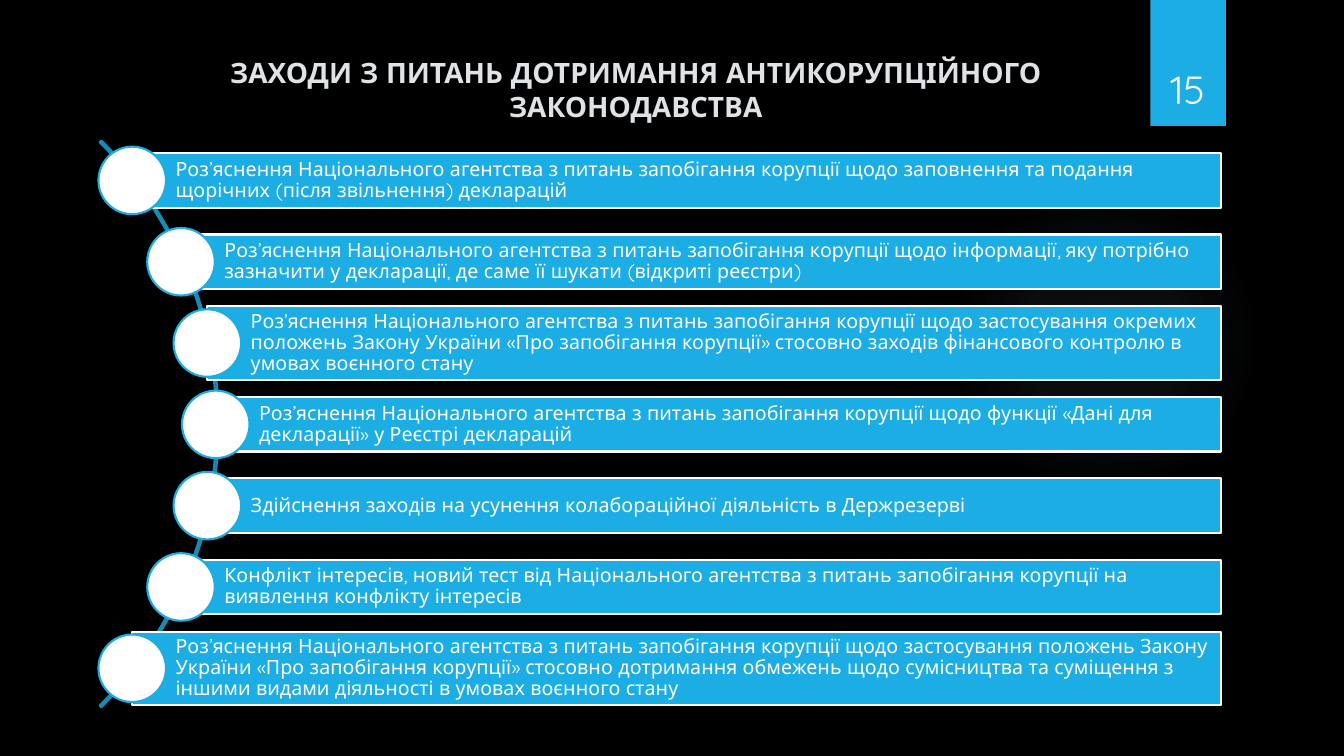
import math

import pptx
import pptx.dml.color
import pptx.enum.shapes
import pptx.enum.text
import pptx.oxml
import pptx.util

Inches = pptx.util.Inches
Pt = pptx.util.Pt
RGBColor = pptx.dml.color.RGBColor
SHAPE = pptx.enum.shapes.MSO_SHAPE
ANCHOR = pptx.enum.text.MSO_ANCHOR
ALIGN = pptx.enum.text.PP_ALIGN

BLACK = RGBColor(0x00, 0x00, 0x00)
WHITE = RGBColor(0xFF, 0xFF, 0xFF)
BLUE = RGBColor(0x1C, 0xAD, 0xE4)
ARC_BLUE = RGBColor(0x16, 0x8B, 0xB7)
TITLE_GRAY = RGBColor(0xDF, 0xE3, 0xE5)
FONT = "Quicksand"

# Each measure with the height of its bar
MEASURES = [
    ("Роз’яснення Національного агентства з питань запобігання корупції щодо "
     "заповнення та подання щорічних (після звільнення) декларацій", 0.54),
    ("Роз’яснення Національного агентства з питань запобігання корупції щодо "
     "інформації, яку потрібно зазначити у декларації, де саме її шукати "
     "(відкриті реєстри)", 0.54),
    ("Роз’яснення Національного агентства з питань запобігання корупції щодо "
     "застосування окремих положень Закону України «Про запобігання корупції» "
     "стосовно заходів фінансового контролю в умовах воєнного стану", 0.74),
    ("Роз’яснення Національного агентства з питань запобігання корупції щодо "
     "функції «Дані для декларації» у Реєстрі декларацій", 0.54),
    ("Здійснення заходів на усунення колабораційної діяльність в Держрезерві", 0.54),
    ("Конфлікт інтересів, новий тест від Національного агентства з питань "
     "запобігання корупції на виявлення конфлікту інтересів", 0.54),
    ("Роз’яснення Національного агентства з питань запобігання корупції щодо "
     "застосування положень Закону України «Про запобігання корупції» стосовно "
     "дотримання обмежень щодо сумісництва та суміщення з іншими видами "
     "діяльності в умовах воєнного стану", 0.72),
]

deck = pptx.Presentation()
deck.slide_width = Inches(13.33)
deck.slide_height = Inches(7.5)
slide = deck.slides.add_slide(deck.slide_layouts[5])
slide.background.fill.solid()
slide.background.fill.fore_color.rgb = BLACK


def add_shape(kind, left, top, width, height, fill=None, line=None):
    shape = slide.shapes.add_shape(
        kind, Inches(left), Inches(top), Inches(width), Inches(height))
    shape.shadow.inherit = False
    if fill is None:
        shape.fill.background()
    else:
        shape.fill.solid()
        shape.fill.fore_color.rgb = fill
    if line is None:
        shape.line.fill.background()
    else:
        shape.line.color.rgb = line
        shape.line.width = Pt(1.5)
    return shape


def write(frame, text, size, color, align, anchor):
    frame.word_wrap = True
    frame.vertical_anchor = anchor
    para = frame.paragraphs[0]
    para.text = text
    para.alignment = align
    para.font.name = FONT
    para.font.size = Pt(size)
    para.font.color.rgb = color
    return para


# Faint round glow, fading to transparent at the rim
glow = add_shape(SHAPE.OVAL, 9.41, 1.83, 3.08, 3.08)
stops = "".join(
    f'<a:gs pos="{place * 1000}"><a:srgbClr val="A0C1D5">'
    f'<a:alpha val="{alpha * 1000}"/></a:srgbClr></a:gs>'
    for place, alpha in [(0, 7), (36, 6), (69, 0), (100, 0)])
gradient = pptx.oxml.parse_xml(
    '<a:gradFill xmlns:a="http://schemas.openxmlformats.org/drawingml/2006/main">'
    f'<a:gsLst>{stops}</a:gsLst><a:path path="circle">'
    '<a:fillToRect l="50000" t="50000" r="50000" b="50000"/></a:path></a:gradFill>')
glow_properties = glow.element.spPr
glow_properties.replace(
    glow_properties.find(pptx.oxml.ns.qn("a:noFill")), gradient)

# Page number tab
add_shape(SHAPE.RECTANGLE, 11.41, 0, 0.75, 1.25, BLUE)
number_box = slide.shapes.add_textbox(
    Inches(11.32), Inches(0.32), Inches(0.92), Inches(0.84))
write(number_box.text_frame, "15", 28, WHITE, ALIGN.CENTER, ANCHOR.BOTTOM)

# Title
title = slide.shapes.title
title.left, title.top = Inches(1.19), Inches(0.5)
title.width, title.height = Inches(10.23), Inches(0.64)
heading = write(title.text_frame,
                "ЗАХОДИ З ПИТАНЬ ДОТРИМАННЯ АНТИКОРУПЦІЙНОГО ЗАКОНОДАВСТВА",
                20, TITLE_GRAY, ALIGN.CENTER, ANCHOR.TOP)
heading.font.bold = True
title.text_frame.auto_size = pptx.enum.text.MSO_AUTO_SIZE.NONE

# Arc that carries the circles
arc = add_shape(SHAPE.BLOCK_ARC, -5.78, 0.23, 7.95, 7.95, line=ARC_BLUE)
for index, value in enumerate([189, 27, 0.003]):
    arc.adjustments[index] = value

# Bars and circles, spaced evenly down the arc
ARC_X, ARC_Y, RADIUS = -1.81, 4.21, 3.95
FIRST_Y, LAST_Y = 1.79, 6.63
BAR_RIGHT, CIRCLE = 12.11, 0.67
pitch = (LAST_Y - FIRST_Y) / (len(MEASURES) - 1)
for row, (text, height) in enumerate(MEASURES):
    y = FIRST_Y + row * pitch
    x = ARC_X + math.sqrt(RADIUS ** 2 - (y - ARC_Y) ** 2)
    bar = add_shape(SHAPE.RECTANGLE, x, y - height / 2, BAR_RIGHT - x, height,
                    BLUE, WHITE)
    frame = bar.text_frame
    frame.margin_left = Inches(0.43)
    frame.margin_top = frame.margin_right = frame.margin_bottom = Inches(0.04)
    para = write(frame, text, 14, WHITE, ALIGN.LEFT, ANCHOR.MIDDLE)
    para.line_spacing = 0.9
    add_shape(SHAPE.OVAL, x - CIRCLE / 2, y - CIRCLE / 2, CIRCLE, CIRCLE,
              WHITE, BLUE)

deck.save("out.pptx")
